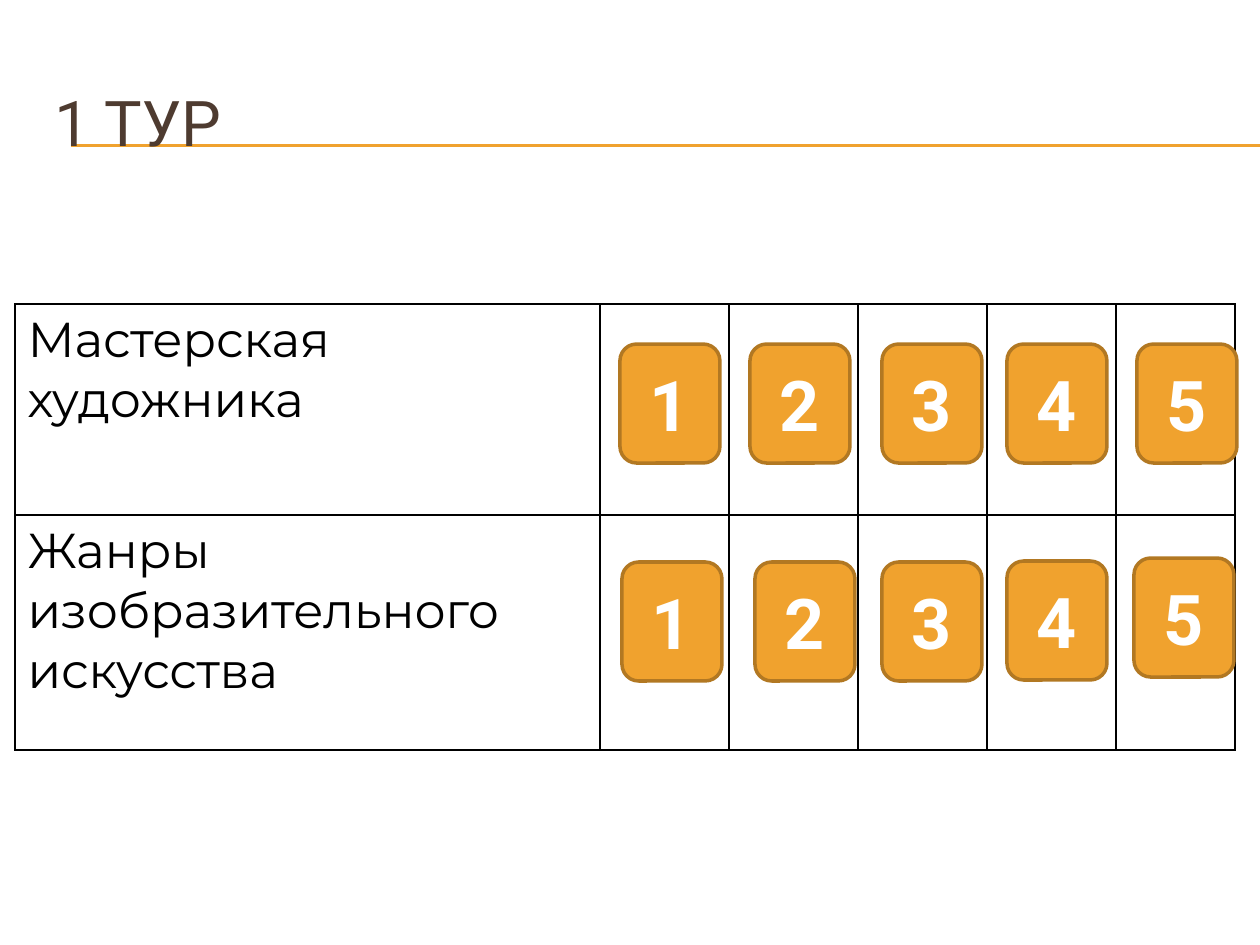
from lxml.etree import SubElement
from pptx import Presentation
from pptx.dml.color import RGBColor
from pptx.enum.shapes import MSO_CONNECTOR, MSO_SHAPE
from pptx.enum.text import MSO_ANCHOR, PP_ALIGN
from pptx.oxml.ns import qn
from pptx.util import Emu, Pt

BROWN = RGBColor(0x4E, 0x3B, 0x30)
ORANGE = RGBColor(0xF0, 0xA2, 0x2E)
DARK_ORANGE = RGBColor(0xB2, 0x78, 0x22)
BLACK = RGBColor(0, 0, 0)
WHITE = RGBColor(0xFF, 0xFF, 0xFF)

TITLE = "1 ТУР"
# Each topic: name, row height, (left, top) of its numbered badges
TOPICS = [
    ("Мастерская художника", 211,
     [(620, 344), (750, 344), (882, 344), (1007, 344), (1137, 344)]),
    ("Жанры изобразительного искусства", 235,
     [(622, 562), (755, 562), (882, 562), (1007, 561), (1134, 558)]),
]
COLUMN_WIDTHS = [585, 129, 129, 129, 129, 119]
TABLE_LEFT, TABLE_TOP = 15, 304
BADGE_WIDTH, BADGE_HEIGHT = 100, 119
RULE_LEFT, RULE_RIGHT, RULE_TOPS = 71, 1260, (145, 146)


def px(value):
    return Emu(round(value * 914400 / 126))


def style_text(text_frame, size, font_name, color, bold=False):
    for paragraph in text_frame.paragraphs:
        for run in paragraph.runs:
            font = run.font
            font.size, font.name, font.bold = Pt(size), font_name, bold
            font.color.rgb = color


def add_rule(slide, top):
    rule = slide.shapes.add_connector(
        MSO_CONNECTOR.STRAIGHT, px(RULE_LEFT), px(top), px(RULE_RIGHT), px(top))
    rule.line.color.rgb = ORANGE
    rule.line.width = Pt(0.75)
    SubElement(rule.element.spPr, qn("a:effectLst"))


def add_title(slide):
    box = slide.shapes.add_textbox(px(42), px(63), px(1197), px(116))
    text_frame = box.text_frame
    text_frame.word_wrap = True
    text_frame.vertical_anchor = MSO_ANCHOR.MIDDLE
    text_frame.text = TITLE
    style_text(text_frame, 36, "Roboto", BROWN)


def add_borders(cell):
    properties = cell._tc.get_or_add_tcPr()
    for side in ("lnL", "lnR", "lnT", "lnB"):
        border = SubElement(properties, qn(f"a:{side}"), w=str(Pt(1)))
        fill = SubElement(border, qn("a:solidFill"))
        SubElement(fill, qn("a:srgbClr"), val=str(BLACK))


def add_topic_table(slide):
    heights = [height for _, height, _ in TOPICS]
    table = slide.shapes.add_table(
        len(TOPICS), len(COLUMN_WIDTHS), px(TABLE_LEFT), px(TABLE_TOP),
        px(sum(COLUMN_WIDTHS)), px(sum(heights))).table
    table.first_row = table.horz_banding = False
    for column, width in zip(table.columns, COLUMN_WIDTHS):
        column.width = px(width)
    for row, (name, height, _) in zip(table.rows, TOPICS):
        row.height = px(height)
        for cell in row.cells:
            add_borders(cell)
            cell.fill.background()
        topic_frame = row.cells[0].text_frame
        topic_frame.text = name
        style_text(topic_frame, 28, "Montserrat", BLACK)


def add_badge(slide, number, left, top):
    badge = slide.shapes.add_shape(
        MSO_SHAPE.ROUNDED_RECTANGLE, px(left), px(top),
        px(BADGE_WIDTH), px(BADGE_HEIGHT))
    badge.shadow.inherit = False
    badge.fill.solid()
    badge.fill.fore_color.rgb = ORANGE
    badge.line.color.rgb = DARK_ORANGE
    badge.line.width = Pt(2)
    text_frame = badge.text_frame
    text_frame.vertical_anchor = MSO_ANCHOR.MIDDLE
    text_frame.text = str(number)
    text_frame.paragraphs[0].alignment = PP_ALIGN.CENTER
    style_text(text_frame, 40, "Roboto", WHITE, bold=True)


def main():
    presentation = Presentation()
    presentation.slide_width, presentation.slide_height = px(1260), px(945)
    slide = presentation.slides.add_slide(presentation.slide_layouts[6])
    for top in RULE_TOPS:
        add_rule(slide, top)
    add_title(slide)
    add_topic_table(slide)
    for _, _, positions in TOPICS:
        for number, (left, top) in enumerate(positions, start=1):
            add_badge(slide, number, left, top)
    presentation.save("out.pptx")


if __name__ == "__main__":
    main()
